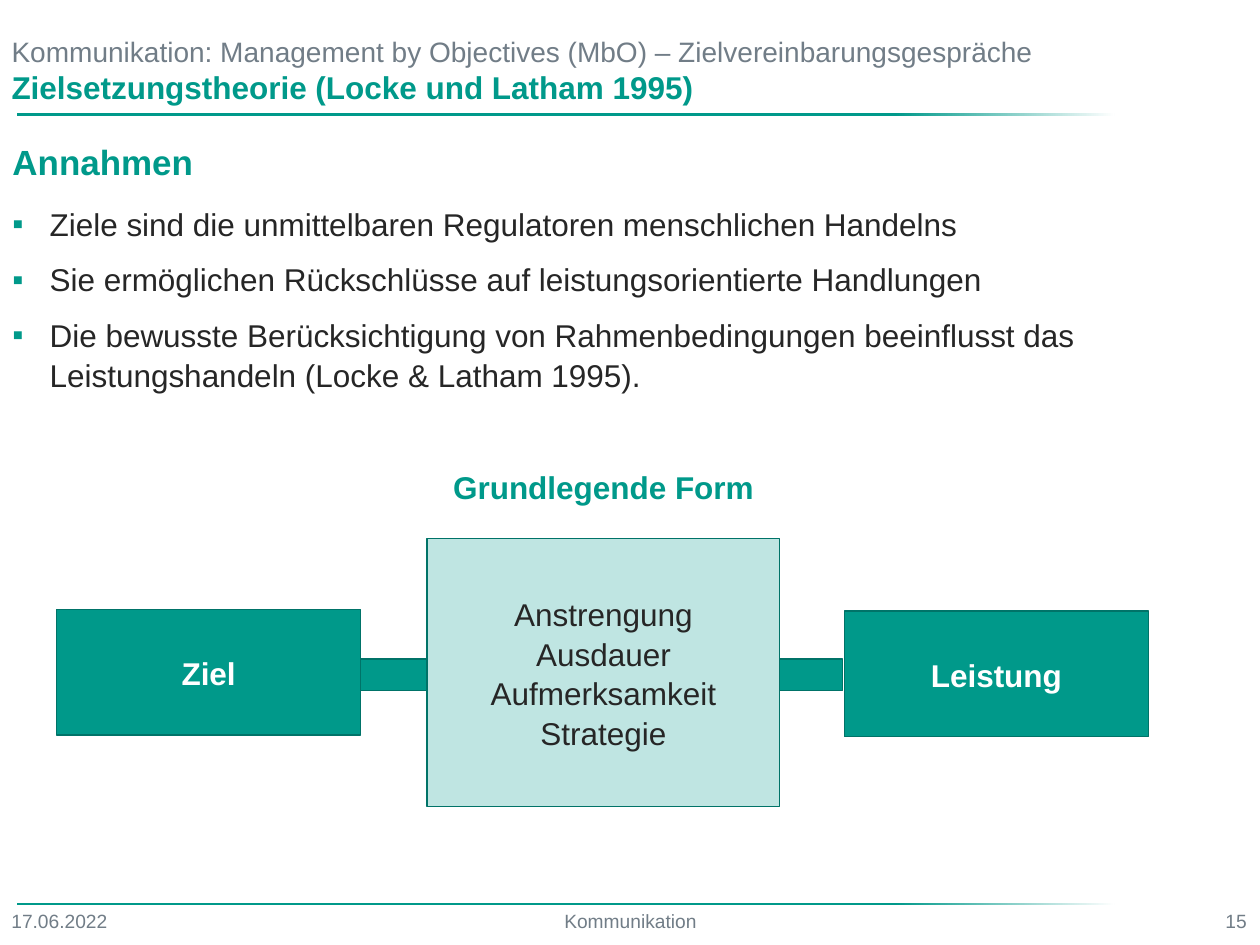
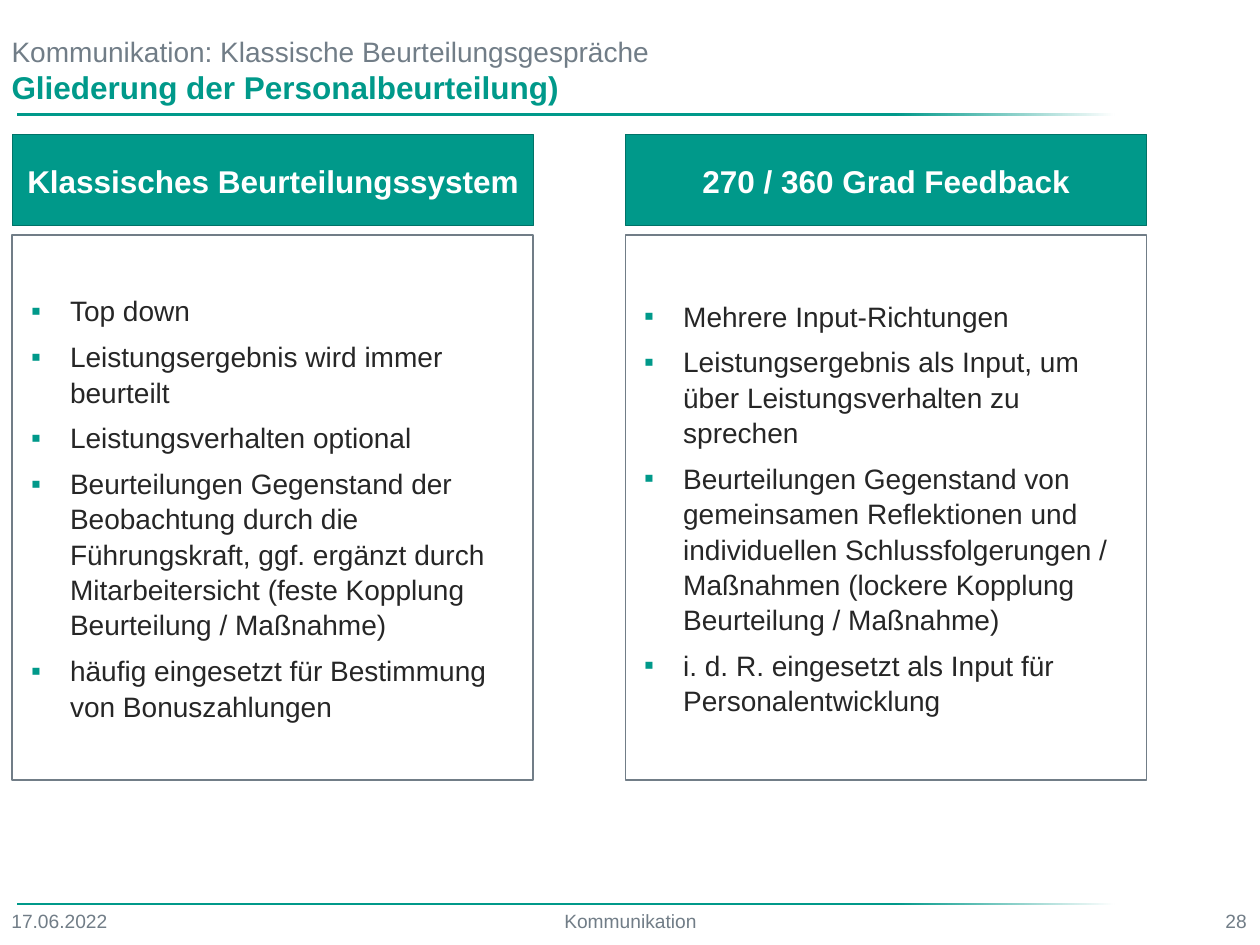
"""Build two slides on goal setting and appraisal systems."""
from copy import deepcopy
from dataclasses import dataclass

from lxml import etree
from pptx import Presentation
from pptx.dml.color import RGBColor
from pptx.enum.shapes import MSO_SHAPE
from pptx.enum.text import MSO_ANCHOR, MSO_AUTO_SIZE, PP_ALIGN
from pptx.oxml.ns import qn
from pptx.util import Inches, Pt

RECTANGLE = MSO_SHAPE.RECTANGLE
TOP, MIDDLE, BOTTOM = MSO_ANCHOR.TOP, MSO_ANCHOR.MIDDLE, MSO_ANCHOR.BOTTOM
LEFT, CENTER, RIGHT = PP_ALIGN.LEFT, PP_ALIGN.CENTER, PP_ALIGN.RIGHT
NO_AUTOFIT = MSO_AUTO_SIZE.NONE


@dataclass(frozen=True)
class Theme:
    font: str = "Arial"
    teal: str = "00998A"
    dark_teal: str = "007368"
    pale_teal: str = "BFE5E2"
    gray: str = "717D87"
    ink: str = "262626"
    white: str = "FFFFFF"
    heading_size: float = 28.4
    text_size: float = 25.6
    small_size: float = 22.8
    footer_size: float = 15.6
    line_spacing: float = 1.05


THEME = Theme()


@dataclass(frozen=True)
class Style:
    size: float
    color: str
    bold: bool = False
    align: PP_ALIGN = LEFT
    spacing: float = THEME.line_spacing
    before: float = 0
    after: float = 0
    margin: float = 0
    hanging: float = 0
    level: int = 0


KICKER = Style(THEME.small_size, THEME.gray, spacing=1)
SUBTITLE = Style(THEME.text_size, THEME.teal, bold=True)
HEADING = Style(THEME.heading_size, THEME.teal, bold=True, after=8.5)
BULLET = Style(THEME.text_size, THEME.ink, before=8.5, after=4.3,
               margin=0.42, hanging=0.42, level=1)
BOX_BULLET = Style(THEME.small_size, THEME.ink, before=8.5, margin=0.55, hanging=0.44)
CAPTION = Style(THEME.text_size, THEME.teal, bold=True, align=CENTER)
BOX_LABEL = Style(THEME.text_size, THEME.white, bold=True, align=CENTER)
BOX_TEXT = Style(THEME.text_size, THEME.ink, align=CENTER)

DATE, FOOTER = "17.06.2022", "Kommunikation"
BANDS = [(0.19, 1.28, 12.39, 0.03), (0.19, 10.2, 12.39, 0.02)]

GOALS = {
    "layout": 3,
    "title": "Kommunikation: Management by Objectives (MbO) – Zielvereinbarungsgespräche",
    "subtitle": "Zielsetzungstheorie (Locke und Latham 1995)",
    "number": "15",
}
ASSUMPTIONS_HEADING = "Annahmen"
ASSUMPTIONS = [
    "Ziele sind die unmittelbaren Regulatoren menschlichen Handelns",
    "Sie ermöglichen Rückschlüsse auf leistungsorientierte Handlungen",
    "Die bewusste Berücksichtigung von Rahmenbedingungen beeinflusst das "
    "Leistungshandeln (Locke & Latham 1995).",
]
DIAGRAM_CAPTION = "Grundlegende Form"
DIAGRAM = [
    ((4.02, 7.44, 5.49, 0.36), THEME.teal, [], BOX_LABEL),
    ((0.64, 6.88, 3.43, 1.42), THEME.teal, ["Ziel"], BOX_LABEL),
    ((9.53, 6.9, 3.43, 1.42), THEME.teal, ["Leistung"], BOX_LABEL),
    ((4.82, 6.08, 3.98, 3.03), THEME.pale_teal,
     ["Anstrengung", "Ausdauer", "Aufmerksamkeit", "Strategie"], BOX_TEXT),
]

APPRAISAL = {
    "layout": 4,
    "title": "Kommunikation: Klassische Beurteilungsgespräche",
    "subtitle": "Gliederung der Personalbeurteilung)",
    "number": "28",
}
COLUMN_LEFT, COLUMN_WIDTH, COLUMN_STEP = 0.14, 5.88, 6.92
COLUMNS = [
    (2, "Klassisches Beurteilungssystem", [
        "Top down",
        "Leistungsergebnis wird immer beurteilt",
        "Leistungsverhalten optional",
        "Beurteilungen Gegenstand der Beobachtung durch die Führungskraft, ggf. "
        "ergänzt durch Mitarbeitersicht (feste Kopplung Beurteilung / Maßnahme)",
        "häufig eingesetzt für Bestimmung von Bonuszahlungen",
    ]),
    (4, "270 / 360 Grad Feedback", [
        "Mehrere Input-Richtungen",
        "Leistungsergebnis als Input, um über Leistungsverhalten zu sprechen",
        "Beurteilungen Gegenstand von gemeinsamen Reflektionen und individuellen "
        "Schlussfolgerungen / Maßnahmen (lockere Kopplung Beurteilung / Maßnahme)",
        "i. d. R. eingesetzt als Input für Personalentwicklung",
    ]),
]


def rgb(color):
    return RGBColor.from_string(color)


def place(shape, box):
    shape.left, shape.top, shape.width, shape.height = map(Inches, box)


def set_bullet(paragraph, style):
    properties = paragraph._p.get_or_add_pPr()
    properties.set("marL", str(Inches(style.margin)))
    properties.set("indent", str(-Inches(style.hanging)))
    if not style.hanging:
        etree.SubElement(properties, qn("a:buNone"))
        return
    color = etree.SubElement(properties, qn("a:buClr"))
    etree.SubElement(color, qn("a:srgbClr"), val=THEME.teal)
    etree.SubElement(properties, qn("a:buFont"), typeface=THEME.font)
    etree.SubElement(properties, qn("a:buChar"), char="▪")


def write(shape, lines, anchor=TOP):
    """Fill a shape with (text, style) pairs, one paragraph each."""
    frame = shape.text_frame
    frame.word_wrap = True
    frame.auto_size = NO_AUTOFIT
    frame.vertical_anchor = anchor
    for index, (text, style) in enumerate(lines):
        paragraph = frame.add_paragraph() if index else frame.paragraphs[0]
        paragraph.text = text
        paragraph.level = style.level
        set_bullet(paragraph, style)
        paragraph.alignment = style.align
        paragraph.line_spacing = style.spacing
        paragraph.space_before = Pt(style.before if index else 0)
        paragraph.space_after = Pt(style.after)
        font = paragraph.font
        font.name, font.size, font.bold = THEME.font, Pt(style.size), style.bold
        font.color.rgb = rgb(style.color)


def styled(texts, style):
    return [(text, style) for text in texts]


def paint(shape, fill, line, width=1):
    shape.fill.solid()
    shape.fill.fore_color.rgb = rgb(fill)
    shape.line.color.rgb = rgb(line)
    shape.line.width = Pt(width)


def add_rectangle(slide, box):
    shape = slide.shapes.add_shape(RECTANGLE, *map(Inches, box))
    shape.shadow.inherit = False
    return shape


def add_box(slide, box, fill, texts, style):
    shape = add_rectangle(slide, box)
    paint(shape, fill, THEME.dark_teal)
    write(shape, styled(texts, style), MIDDLE)


def add_text(slide, box, text, style, anchor=TOP):
    write(slide.shapes.add_textbox(*map(Inches, box)), [(text, style)], anchor)


def add_band(slide, box):
    band = add_rectangle(slide, box)
    band.line.fill.background()
    band.fill.gradient()
    band.fill.gradient_angle = 0
    stop_list = band._element.spPr.find(qn("a:gradFill")).find(qn("a:gsLst"))
    stop_list.insert(0, deepcopy(stop_list[0]))
    stops = [(0, THEME.teal), (0.8, THEME.teal), (1, THEME.white)]
    for stop, (position, color) in zip(band.fill.gradient_stops, stops):
        stop.position = position
        stop.color.rgb = rgb(color)


def add_slide(presentation, content):
    """Add a slide with its title, subtitle, bands and footer."""
    slide = presentation.slides.add_slide(presentation.slide_layouts[content["layout"]])
    for band in BANDS:
        add_band(slide, band)
    title, subtitle = slide.shapes.title, slide.placeholders[1]
    place(title, (0.03, 0.27, 12.34, 0.55))
    write(title, [(content["title"], KICKER)], BOTTOM)
    place(subtitle, (0.03, 0.7, 12.37, 0.56))
    write(subtitle, [(content["subtitle"], SUBTITLE)])
    footers = [(0.03, 2.37, DATE, LEFT), (2.79, 8.65, FOOTER, CENTER),
               (11.8, 2.37, content["number"], RIGHT)]
    for left, width, text, align in footers:
        style = Style(THEME.footer_size, THEME.gray, align=align, spacing=1)
        add_text(slide, (left, 10.22, width, 0.44), text, style)
    return slide


def build_goals(presentation):
    slide = add_slide(presentation, GOALS)
    body = slide.placeholders[2]
    place(body, (0.04, 1.51, 12.93, 8.36))
    write(body, [(ASSUMPTIONS_HEADING, HEADING)] + styled(ASSUMPTIONS, BULLET))
    add_text(slide, (4.82, 5.22, 3.98, 0.53), DIAGRAM_CAPTION, CAPTION, MIDDLE)
    for box, fill, texts, style in DIAGRAM:
        add_box(slide, box, fill, texts, style)


def build_appraisal(presentation):
    slide = add_slide(presentation, APPRAISAL)
    for index, (placeholder_index, heading, points) in enumerate(COLUMNS):
        left = COLUMN_LEFT + index * COLUMN_STEP
        add_box(slide, (left, 1.52, COLUMN_WIDTH, 1.03), THEME.teal, [heading], BOX_LABEL)
        body = slide.placeholders[placeholder_index]
        place(body, (left, 2.65, COLUMN_WIDTH, 6.16))
        paint(body, THEME.white, THEME.gray, 1.5)
        write(body, styled(points, BOX_BULLET), MIDDLE)
    unused = slide.placeholders[3]._element
    unused.getparent().remove(unused)


def main():
    presentation = Presentation()
    presentation.slide_width, presentation.slide_height = Inches(14.22), Inches(10.67)
    build_goals(presentation)
    build_appraisal(presentation)
    presentation.save("out.pptx")


if __name__ == "__main__":
    main()
